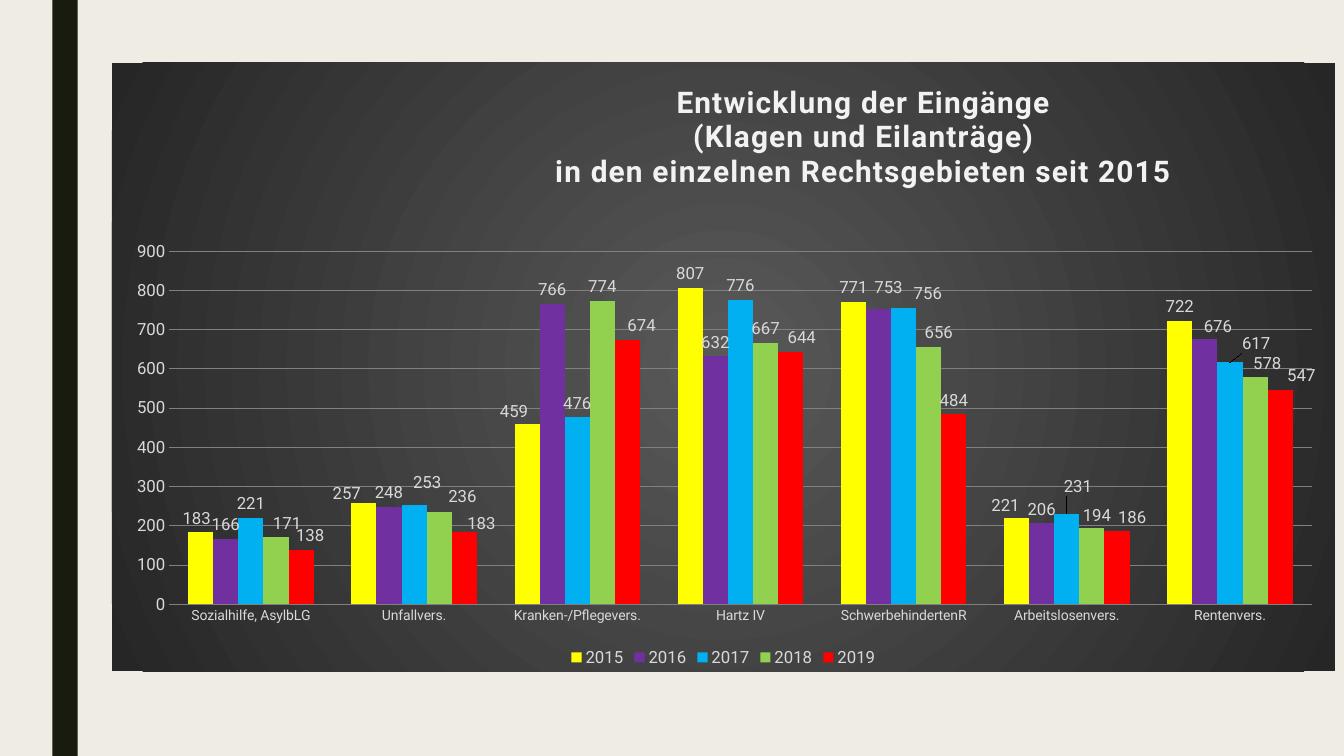
"""Build a slide with a clustered column chart of court filings by legal field."""
from dataclasses import dataclass

from lxml import etree
from pptx import Presentation
from pptx import util as u
from pptx.chart import data as chart_data
from pptx.dml.color import RGBColor
from pptx.enum import chart as kinds
from pptx.enum import shapes
from pptx.oxml import parse_xml
from pptx.oxml.ns import nsdecls, qn


@dataclass(frozen=True)
class Theme:
    font: str = "Roboto"
    background: str = "EFEDE3"
    stripe: str = "191B0E"
    title: str = "F2F2F2"
    label: str = "D9D9D9"
    grid: str = "808080"
    center: str = "595959"
    edge: str = "262626"
    title_size: float = 21.3
    label_size: float = 12
    category_size: float = 10


def style(font, size, color, bold=False):
    values = {"name": theme.font, "size": u.Pt(size), "bold": bold}
    for name, value in values.items():
        setattr(font, name, value)
    font.color.rgb = RGBColor.from_string(color)


def place(parent, index, **values):
    for old in parent.findall(qn("c:layout")):
        parent.remove(old)
    layout = parse_xml(f'<c:layout {nsdecls("c")}><c:manualLayout/></c:layout>')
    for name, value in values.items():
        etree.SubElement(layout[0], qn(f"c:{name}")).set("val", str(value))
    parent.insert(index, layout)


theme = Theme()
chart_width, chart_height = 12.13, 6.04
title_lines = [
    "Entwicklung der Eingänge",
    "(Klagen und Eilanträge)",
    "in den einzelnen Rechtsgebieten seit 2015",
]
fields = ["Sozialhilfe, AsylbLG", "Unfallvers.", "Kranken-/Pflegevers.", "Hartz IV",
          "SchwerbehindertenR", "Arbeitslosenvers.", "Rentenvers."]
years = {
    "2015": ("FFFF00", [183, 257, 459, 807, 771, 221, 722]),
    "2016": ("7030A0", [166, 248, 766, 632, 753, 206, 676]),
    "2017": ("00B0F0", [221, 253, 476, 776, 756, 231, 617]),
    "2018": ("92D050", [171, 236, 774, 667, 656, 194, 578]),
    "2019": ("FF0000", [138, 183, 674, 644, 484, 186, 547]),
}
label_shifts = {
    "2015": {0: (-0.04, 0), 1: (-0.17, 0.04), 2: (-0.13, 0.01), 5: (-0.11, 0.02)},
    "2016": {4: (0.1, -0.07), 6: (0.13, 0.02)},
    "2017": {1: (0.13, -0.08), 4: (0.24, 0), 5: (0.11, -0.13), 6: (0.26, -0.05)},
    "2018": {0: (0.11, 0), 1: (0.23, -0.01), 4: (0.1, 0), 5: (0.05, 0.01), 6: (0.12, 0)},
    "2019": {0: (0.09, 0), 1: (0.17, 0.05), 2: (0.14, 0), 3: (0.11, 0),
             5: (0.15, 0), 6: (0.21, 0)},
}

deck = Presentation()
deck.slide_width, deck.slide_height = u.Inches(13.33), u.Inches(7.5)
page = deck.slides.add_slide(deck.slide_layouts[6])
page.background.fill.solid()
page.background.fill.fore_color.rgb = RGBColor.from_string(theme.background)

stripe = page.shapes.add_shape(
    shapes.MSO_SHAPE.RECTANGLE, u.Inches(0.52), 0, u.Inches(0.25), deck.slide_height)
stripe.shadow.inherit = False
stripe.fill.solid()
stripe.fill.fore_color.rgb = RGBColor.from_string(theme.stripe)
stripe.line.fill.background()

filings = chart_data.CategoryChartData()
filings.categories = fields
for year, (color, counts) in years.items():
    filings.add_series(year, counts)
chart = page.shapes.add_chart(
    kinds.XL_CHART_TYPE.COLUMN_CLUSTERED, u.Inches(1.11), u.Inches(0.62),
    u.Inches(chart_width), u.Inches(chart_height), filings).chart
style(chart.font, theme.category_size, theme.label)
chart.element.find(qn("c:chart")).addnext(parse_xml(
    f'<c:spPr {nsdecls("c", "a")}><a:gradFill><a:gsLst>'
    f'<a:gs pos="0"><a:srgbClr val="{theme.center}"/></a:gs>'
    f'<a:gs pos="100000"><a:srgbClr val="{theme.edge}"/></a:gs></a:gsLst>'
    '<a:path path="circle"><a:fillToRect l="50000" t="50000" r="50000" b="50000"/></a:path>'
    '</a:gradFill><a:ln><a:noFill/></a:ln></c:spPr>'))

chart.has_title = True
heading = chart.chart_title.text_frame
for number, line in enumerate(title_lines):
    para = heading.paragraphs[0] if number == 0 else heading.add_paragraph()
    span = para.add_run()
    span.text = line
    style(span.font, theme.title_size, theme.title, bold=True)
    span.font._element.set("spc", "100")
place(chart.element.find(".//" + qn("c:title")), 1,
      xMode="edge", yMode="edge", x=0.36, y=0.03)
place(chart.element.find(".//" + qn("c:plotArea")), 0, layoutTarget="inner",
      xMode="edge", yMode="edge", x=0.047, y=0.31, w=0.934, h=0.58)

chart.has_legend = True
chart.legend.position = kinds.XL_LEGEND_POSITION.BOTTOM
chart.legend.include_in_layout = False
style(chart.legend.font, theme.label_size, theme.label)

for axis, size in ((chart.category_axis, theme.category_size),
                   (chart.value_axis, theme.label_size)):
    axis.major_tick_mark = axis.minor_tick_mark = kinds.XL_TICK_MARK.NONE
    axis.format.line.fill.background()
    style(axis.tick_labels.font, size, theme.label)
values = {"minimum_scale": 0, "maximum_scale": 900, "major_unit": 100,
          "has_major_gridlines": True}
for name, value in values.items():
    setattr(chart.value_axis, name, value)
grid = chart.value_axis.major_gridlines.format.line
grid.width = u.Pt(0.75)
grid.color.rgb = RGBColor.from_string(theme.grid)

plot = chart.plots[0]
plot.gap_width, plot.overlap, plot.vary_by_categories = 150, 0, False
for series in plot.series:
    series.format.fill.solid()
    series.format.fill.fore_color.rgb = RGBColor.from_string(years[series.name][0])
    labels = series.data_labels
    labels.show_value = True
    labels.position = kinds.XL_LABEL_POSITION.OUTSIDE_END
    style(labels.font, theme.label_size, theme.label)
    for index, (across, down) in label_shifts[series.name].items():
        label = series.points[index].data_label
        label.position = kinds.XL_LABEL_POSITION.OUTSIDE_END
        style(label.font, theme.label_size, theme.label)
        place(label._dLbl, 1, x=round(across / chart_width, 4),
              y=round(down / chart_height, 4))

deck.save("out.pptx")
